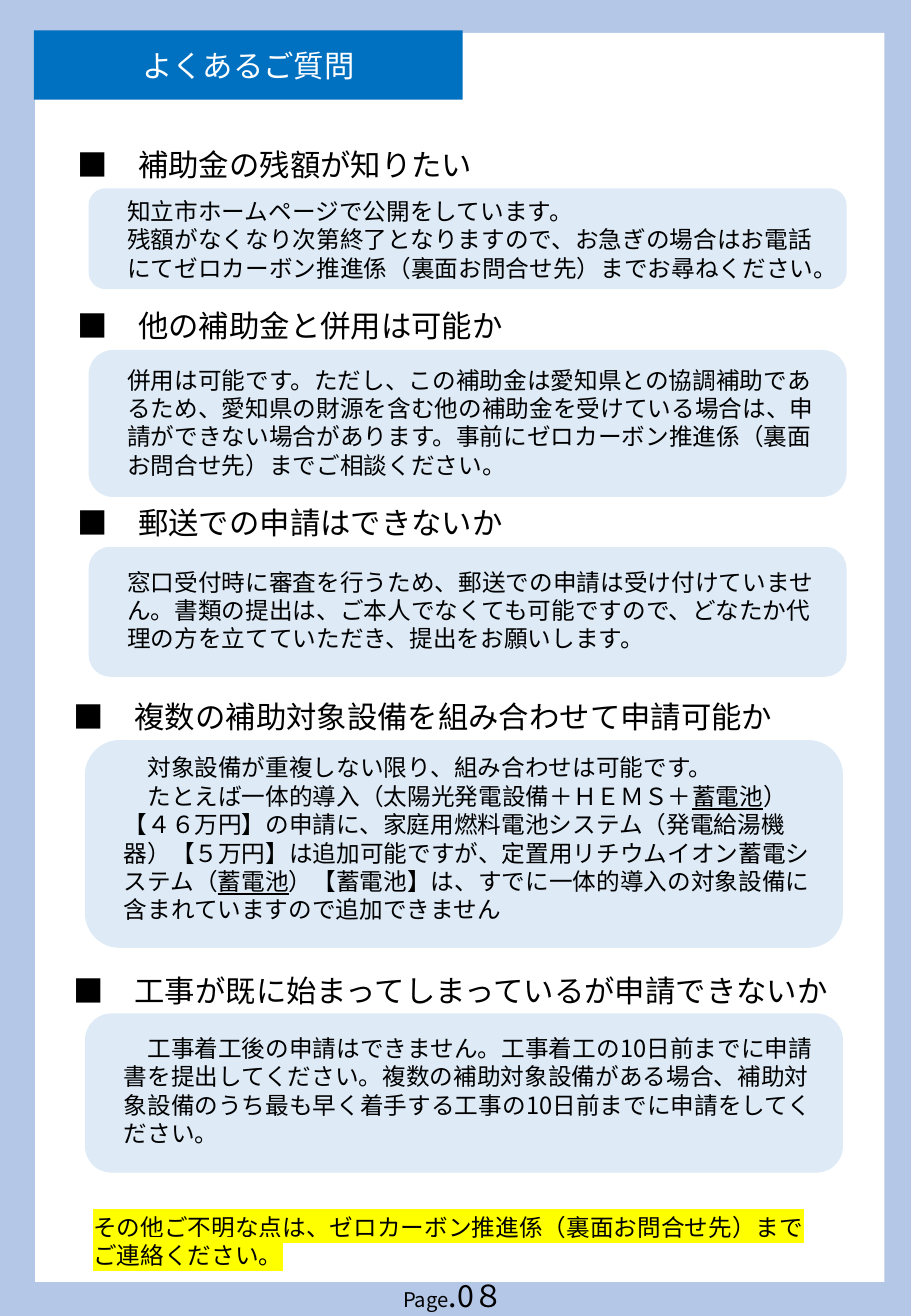
from typing import NamedTuple

from lxml import etree
from pptx import Presentation
from pptx import util as u
from pptx.dml.color import RGBColor
from pptx.enum import shapes, text
from pptx.oxml.ns import qn

FONT = "Noto Sans CJK JP"
FRAME_BLUE, TITLE_BLUE, ANSWER_BLUE = "B4C7E7", "0070C0", "DEEBF7"
BLACK, WHITE, YELLOW = "000000", "FFFFFF", "FFFF00"
HEADING_SIZE, BODY_SIZE = 18, 14


class Run(NamedTuple):
    words: str
    size: float = BODY_SIZE
    color: str = BLACK
    underline: bool = False
    highlight: str = ""


class Box(NamedTuple):
    left: float
    top: float
    width: float
    height: float


class Question(NamedTuple):
    heading: str
    left: float
    top: float
    panel_top: float
    panel_height: float
    answer_top: float
    answer_height: float
    answer: list[list[Run]]


QUESTIONS = [
    Question("補助金の残額が知りたい", 0.54, 1.15, 1.55, 0.83, 1.57, 0.81, [
        [Run("知立市ホームページで公開をしています。")],
        [Run("残額がなくなり次第終了となりますので、お急ぎの場合はお電話"
             "にてゼロカーボン推進係（裏面お問合せ先）までお尋ねください。")],
    ]),
    Question("他の補助金と併用は可能か", 0.54, 2.48, 2.88, 1.21, 2.96, 1.04, [
        [Run("併用は可能です。ただし、この補助金は愛知県との協調補助であ"
             "るため、愛知県の財源を含む他の補助金を受けている場合は、申"
             "請ができない場合があります。事前にゼロカーボン推進係（裏面"
             "お問合せ先）までご相談ください。")],
    ]),
    Question("郵送での申請はできないか", 0.54, 4.1, 4.5, 1.07, 4.62, 0.81, [
        [Run("窓口受付時に審査を行うため、郵送での申請は受け付けていませ"
             "ん。書類の提出は、ご本人でなくても可能ですので、どなたか代"
             "理の方を立てていただき、提出をお願いします。")],
    ]),
    Question("複数の補助対象設備を組み合わせて申請可能か", 0.51, 5.7, 6.09, 1.71, 6.15, 1.51, [
        [Run("　対象設備が重複しない限り、組み合わせは可能です。")],
        [Run("　たとえば一体的導入（太陽光発電設備＋ＨＥＭＳ＋"),
         Run("蓄電池", underline=True),
         Run("）【４６万円】の申請に、家庭用燃料電池システム（発電給湯機器）"
             "【５万円】は追加可能ですが、定置用リチウムイオン蓄電システム（"),
         Run("蓄電池", underline=True),
         Run("）【蓄電池】は、すでに一体的導入の対象設備に"
             "含まれていますので追加できません")],
    ]),
    Question("工事が既に始まってしまっているが申請できないか", 0.51, 7.95, 8.34, 1.31, 8.46, 1.04, [
        [Run("　工事着工後の申請はできません。工事着工の10日前までに申請"
             "書を提出してください。複数の補助対象設備がある場合、補助対"
             "象設備のうち最も早く着手する工事の10日前までに申請をしてく"
             "ださい。")],
    ]),
]

CONTACT_NOTE = [
    [Run("その他ご不明な点は、ゼロカーボン推進係（裏面お問合せ先）まで", highlight=YELLOW)],
    [Run("ご連絡ください。", highlight=YELLOW)],
]


def rgb(color: str) -> RGBColor:
    return RGBColor.from_string(color)


def inches(box: Box) -> list[u.Length]:
    return [u.Inches(length) for length in box]


def add_run(paragraph, run: Run) -> None:
    piece = paragraph.add_run()
    piece.text = run.words
    font = piece.font
    font.size = u.Pt(run.size)
    font.color.rgb = rgb(run.color)
    if run.underline:
        font.underline = True
    properties = piece._r.get_or_add_rPr()
    if run.highlight:
        highlight = etree.SubElement(properties, qn("a:highlight"))
        etree.SubElement(highlight, qn("a:srgbClr"), val=run.highlight)
    font.name = FONT
    etree.SubElement(properties, qn("a:ea"), typeface=FONT)


def fill_frame(frame, paragraphs: list[list[Run]]) -> None:
    for index, runs in enumerate(paragraphs):
        paragraph = frame.paragraphs[0] if index == 0 else frame.add_paragraph()
        for run in runs:
            add_run(paragraph, run)


def add_panel(slide, kind: shapes.MSO_SHAPE, box: Box, color: str):
    """Add a filled shape without outline or shadow."""
    shape = slide.shapes.add_shape(kind, *inches(box))
    shape.shadow.inherit = False
    shape.fill.solid()
    shape.fill.fore_color.rgb = rgb(color)
    shape.line.fill.background()
    return shape


def add_text(slide, box: Box, paragraphs: list[list[Run]], wrap: bool = True) -> None:
    frame = slide.shapes.add_textbox(*inches(box)).text_frame
    frame.word_wrap = wrap
    fill_frame(frame, paragraphs)


def add_title(slide) -> None:
    banner = add_panel(slide, shapes.MSO_SHAPE.RECTANGLE, Box(0.28, 0.25, 3.53, 0.57), TITLE_BLUE)
    frame = banner.text_frame
    frame.vertical_anchor = text.MSO_ANCHOR.MIDDLE
    fill_frame(frame, [[Run("よくあるご質問", HEADING_SIZE, WHITE)]])
    frame.paragraphs[0].alignment = text.PP_ALIGN.CENTER


def add_question(slide, question: Question) -> None:
    heading = Run(f"■　{question.heading}", HEADING_SIZE)
    add_text(slide, Box(question.left, question.top, 6.9, 0.4), [[heading]])
    panel = Box(question.left + 0.19, question.panel_top, 6.24, question.panel_height)
    add_panel(slide, shapes.MSO_SHAPE.ROUNDED_RECTANGLE, panel, ANSWER_BLUE)
    answer = Box(question.left + 0.41, question.answer_top, 6.01, question.answer_height)
    add_text(slide, answer, question.answer)


def main() -> None:
    presentation = Presentation()
    presentation.slide_width = u.Inches(7.5)
    presentation.slide_height = u.Inches(10.83)
    slide = presentation.slides.add_slide(presentation.slide_layouts[6])

    add_panel(slide, shapes.MSO_SHAPE.RECTANGLE, Box(0, 0, 7.5, 10.83), FRAME_BLUE)
    add_panel(slide, shapes.MSO_SHAPE.RECTANGLE, Box(0.29, 0.27, 6.99, 10.28), WHITE)
    page_number = [Run("Page", 12), Run(".0８", HEADING_SIZE)]
    add_text(slide, Box(3.22, 10.46, 1.12, 0.37), [page_number], wrap=False)
    add_title(slide)
    for question in QUESTIONS:
        add_question(slide, question)
    add_text(slide, Box(0.67, 9.93, 6.26, 0.57), CONTACT_NOTE)

    presentation.save("out.pptx")


if __name__ == "__main__":
    main()
